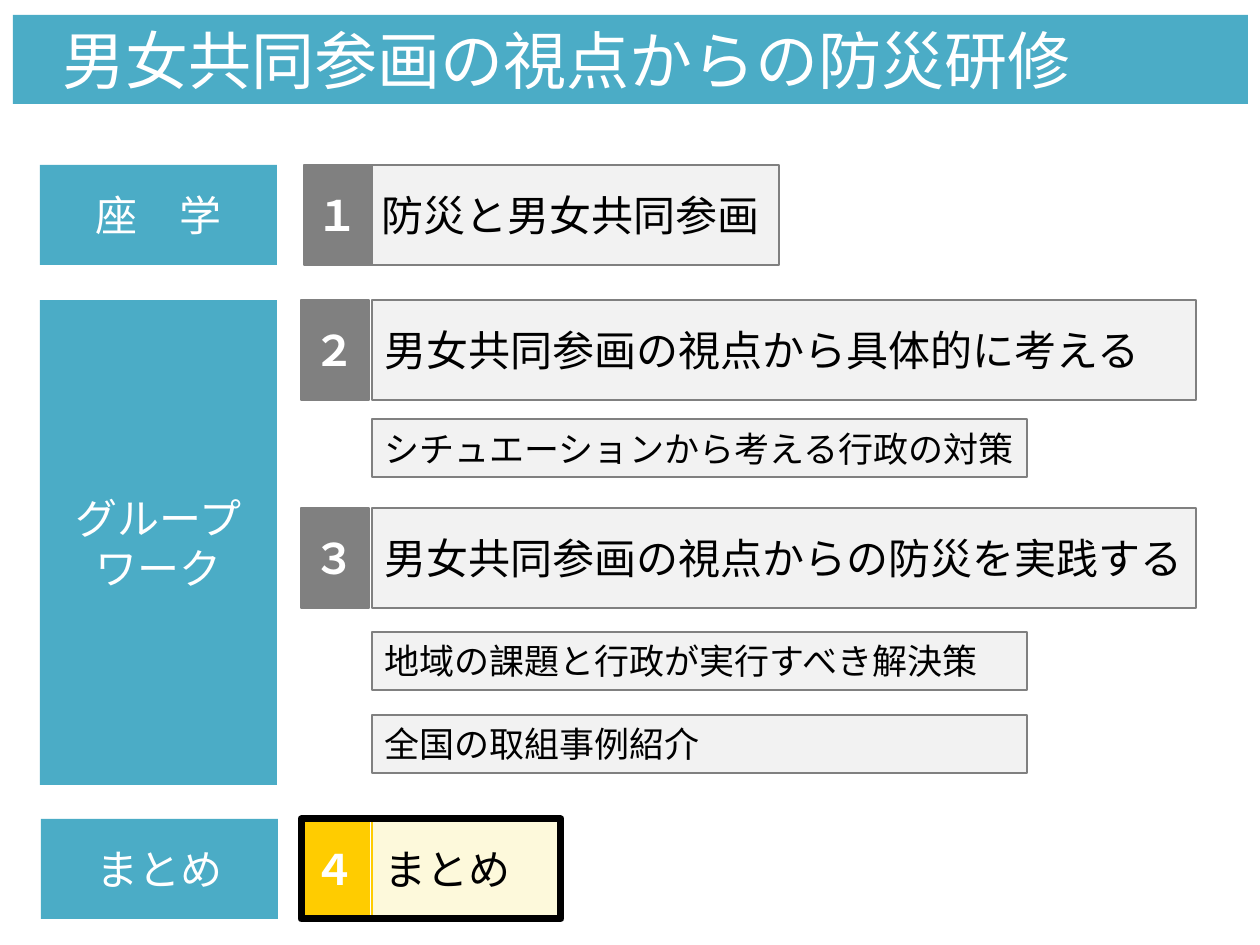
from pptx import Presentation
from pptx.dml.color import RGBColor
from pptx.enum.shapes import MSO_SHAPE as Shape
from pptx.enum.text import MSO_ANCHOR as Anchor, MSO_AUTO_SIZE as AutoSize, PP_ALIGN as Align
from pptx.util import Emu, Pt

PX = 914400 / 126
TEAL = RGBColor(0x4B, 0xAC, 0xC6)
GRAY = RGBColor(0x80, 0x80, 0x80)
PALE_GRAY = RGBColor(0xF2, 0xF2, 0xF2)
YELLOW = RGBColor(0xFF, 0xCC, 0x00)
PALE_YELLOW = RGBColor(0xFD, 0xF9, 0xDB)
BLACK = RGBColor(0, 0, 0)
WHITE = RGBColor(0xFF, 0xFF, 0xFF)

ROW_HEIGHT = 100
DETAIL_HEIGHT = 58
PHASE_LEFT = 40
NUMBER_LEFT = 301
TOPIC_LEFT = 372


def px(length):
    return Emu(round(length * PX))


class AgendaSlide:
    """Holds the current slide and the style shared by its boxes."""

    font_name = "Calibri"
    heading_font = "Arial"
    text_size = 24
    detail_size = 20

    def __init__(self, presentation):
        self.slide = presentation.slides.add_slide(presentation.slide_layouts[5])

    def title(self, text, left, top, width, height):
        shape = self.slide.shapes.title
        shape.left, shape.top, shape.width, shape.height = map(px, (left, top, width, height))
        shape.fill.solid()
        shape.fill.fore_color.rgb = TEAL
        frame = shape.text_frame
        frame.auto_size = AutoSize.NONE
        frame.margin_left = px(49)
        self.set_text(frame, text, 36, WHITE, Align.LEFT, self.heading_font)

    def set_text(self, frame, text, size, color, align=Align.LEFT, font_name=None, bold=False):
        frame.text = text
        frame.vertical_anchor = Anchor.MIDDLE
        for paragraph in frame.paragraphs:
            paragraph.alignment = align
            font = paragraph.font
            font.name = font_name or self.font_name
            font.size = Pt(size)
            font.bold = bold
            font.color.rgb = color

    def box(self, left, top, width, height, fill=None, line=None, line_width=0.75):
        shape = self.slide.shapes.add_shape(
            Shape.RECTANGLE, px(left), px(top), px(width), px(height))
        shape.shadow.inherit = False
        if fill is None:
            shape.fill.background()
        else:
            shape.fill.solid()
            shape.fill.fore_color.rgb = fill
        if line is None:
            shape.line.fill.background()
        else:
            shape.line.color.rgb = line
            shape.line.width = Pt(line_width)
        return shape

    def phase(self, text, top, height=ROW_HEIGHT, left=PHASE_LEFT):
        frame = self.box(left, top, 237, height, TEAL).text_frame
        frame.word_wrap = False
        self.set_text(frame, text, self.text_size, WHITE, Align.CENTER)

    def topic(self, number, text, top, width, number_left=NUMBER_LEFT, left=TOPIC_LEFT,
              fill=PALE_GRAY, accent=GRAY):
        """Adds a wide topic box and the number box at its left."""
        topic = self.box(left, top, width, ROW_HEIGHT, fill, accent)
        self.set_text(topic.text_frame, text, self.text_size, BLACK)
        frame = self.box(number_left, top, 68, ROW_HEIGHT, accent, accent).text_frame
        frame.word_wrap = False
        self.set_text(frame, number, self.text_size, WHITE, bold=True)

    def detail(self, text, top):
        shape = self.box(TOPIC_LEFT, top, 655, DETAIL_HEIGHT, PALE_GRAY, GRAY)
        self.set_text(shape.text_frame, text, self.detail_size, BLACK)

    def highlight(self, left, top, width):
        self.box(left, top, width, ROW_HEIGHT, line=BLACK, line_width=4)


def main():
    presentation = Presentation()
    presentation.slide_width, presentation.slide_height = px(1260), px(945)
    agenda = AgendaSlide(presentation)
    agenda.title("男女共同参画の視点からの防災研修", 13, 15, 1235, 89)

    agenda.phase("座　学", 165)
    agenda.phase("グループ\nワーク", 300, 485)
    agenda.phase("まとめ", 819, left=41)

    agenda.topic("１", "防災と男女共同参画", 165, 410, number_left=304, left=369)
    agenda.topic("２", "男女共同参画の視点から具体的に考える", 300, 824)
    agenda.topic("３", "男女共同参画の視点からの防災を実践する", 508, 824)
    agenda.topic("４", "まとめ", 819, 189, fill=PALE_YELLOW, accent=YELLOW)

    for text, top in (
        ("シチュエーションから考える行政の対策", 419),
        ("地域の課題と行政が実行すべき解決策", 632),
        ("全国の取組事例紹介", 715),
    ):
        agenda.detail(text, top)

    agenda.highlight(NUMBER_LEFT, 819, 260)
    presentation.save("out.pptx")


if __name__ == "__main__":
    main()
